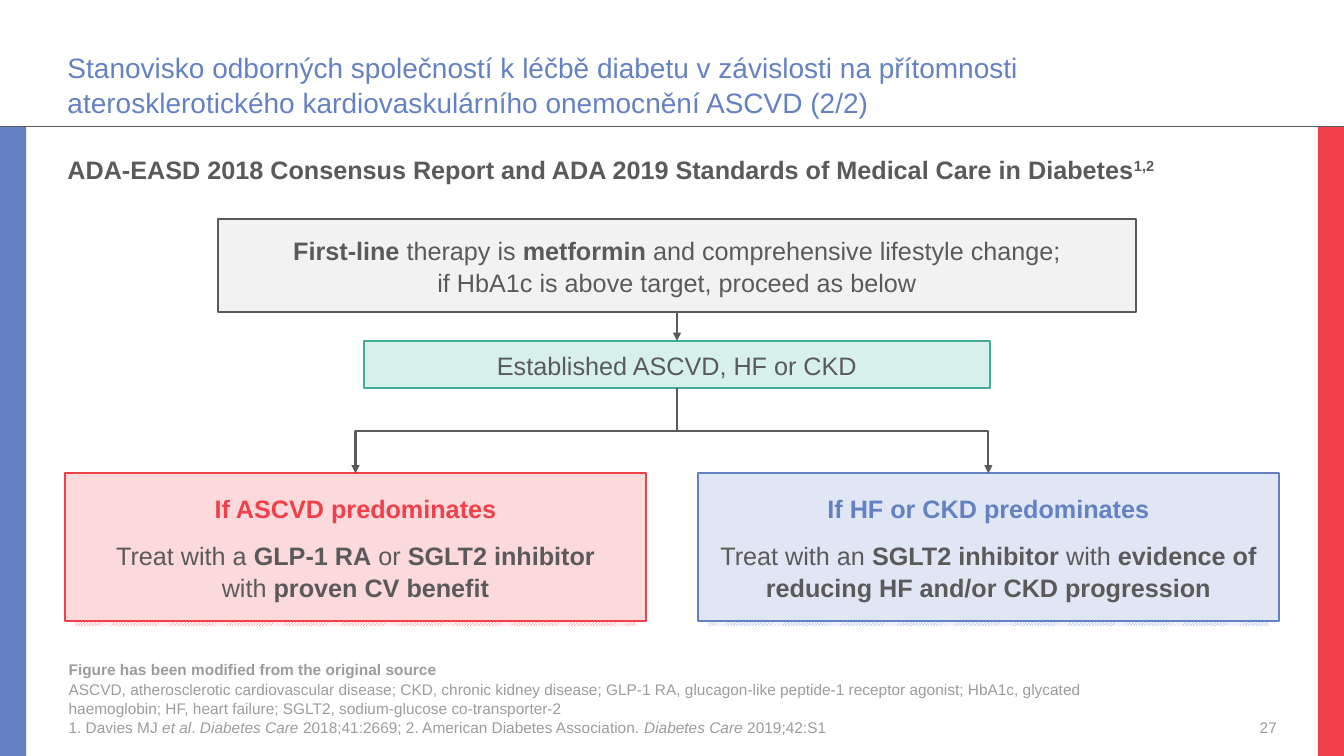
"""Build the slide on consensus treatment of diabetes with ASCVD, HF or CKD."""
from lxml.etree import SubElement
from pptx import Presentation
from pptx.dml.color import RGBColor
from pptx.enum.dml import MSO_PATTERN
from pptx.enum.shapes import MSO_CONNECTOR, MSO_SHAPE
from pptx.enum.text import MSO_ANCHOR, MSO_AUTO_SIZE, PP_ALIGN
from pptx.oxml.ns import qn
from pptx.util import Cm, Pt

BLUE = RGBColor(0x64, 0x82, 0xC3)
RED = RGBColor(0xF0, 0x41, 0x4B)
GREEN = RGBColor(0x43, 0xAC, 0x99)
DARK = RGBColor(0x5A, 0x5A, 0x5A)
GREY = RGBColor(0x9C, 0x9C, 0x9C)
WHITE = RGBColor(0xFF, 0xFF, 0xFF)
PALE_GREY = RGBColor(0xF2, 0xF2, 0xF2)
PALE_GREEN = RGBColor(0xD8, 0xF0, 0xEB)
PALE_RED = RGBColor(0xFC, 0xD9, 0xDB)
PALE_BLUE = RGBColor(0xE0, 0xE6, 0xF3)

TITLE = [[("Stanovisko odborných společností k léčbě diabetu v závislosti na přítomnosti "
           "aterosklerotického kardiovaskulárního onemocnění ASCVD (2/2)", "")]]
HEADING = [[("ADA-EASD 2018 Consensus Report and ADA 2019 Standards of Medical Care in Diabetes", "bold"),
            ("1,2", "bold super")]]
FIRST_LINE = [[("First-line", "bold"), (" therapy is ", ""), ("metformin", "bold"),
               (" and comprehensive lifestyle change;", ""), ("\n", ""),
               ("if HbA1c is above target, proceed as below", "")]]
ESTABLISHED = [[("Established ASCVD, HF or CKD", "")]]
BRANCHES = [
    (1.63, RED, PALE_RED, [
        [("If ASCVD predominates", "bold")],
        [("Treat with a ", ""), ("GLP-1 RA", "bold"), (" or ", ""), ("SGLT2 inhibitor", "bold"),
         ("\n", ""), ("with ", ""), ("proven CV benefit", "bold")]]),
    (17.58, BLUE, PALE_BLUE, [
        [("If HF or CKD predominates", "bold")],
        [("Treat with an ", ""), ("SGLT2 inhibitor ", "bold"), ("with ", ""),
         ("evidence of reducing HF and/or CKD progression", "bold")]]),
]
FOOTNOTES = [
    [("Figure has been modified from the original source", "bold")],
    [("ASCVD, atherosclerotic cardiovascular disease; CKD, chronic kidney disease; GLP-1 RA, "
      "glucagon-like peptide-1 receptor agonist; HbA1c, glycated haemoglobin; HF, heart failure; "
      "SGLT2, sodium-glucose co-transporter-2", "")],
    [("1. Davies MJ ", ""), ("et al", "italic"), (". ", ""), ("Diabetes Care ", "italic"),
     ("2018;41:2669; 2. American Diabetes Association. ", ""), ("Diabetes Care ", "italic"),
     ("2019;42:S1", "")],
]
PAGE = [[("27", "")]]

SLIDE_W, SLIDE_H = 33.87, 19.05
RULE_Y, BAR_W = 3.18, 0.66
CENTRE_X = 17.06
FIRST_Y, FIRST_W, FIRST_H = 5.51, 23.14, 2.36
EST_Y, EST_W, EST_H = 8.59, 15.77, 1.19
BRANCH_Y, BRANCH_W, BRANCH_H = 11.93, 14.66, 3.71
HATCH_INSET, HATCH_DROP = 0.27, 0.13


def write(sp, paragraphs, size, colors, align=PP_ALIGN.LEFT, anchor=MSO_ANCHOR.MIDDLE, inset=True):
    tf = sp.text_frame
    tf.word_wrap = True
    tf.auto_size = MSO_AUTO_SIZE.NONE
    tf.vertical_anchor = anchor
    if not inset:
        tf.margin_left = tf.margin_top = tf.margin_right = tf.margin_bottom = 0
    for i, runs in enumerate(paragraphs):
        p = tf.add_paragraph() if i else tf.paragraphs[0]
        p.alignment = align
        p.line_spacing = 1.05
        p.space_before = Pt(11.5 if i and len(colors) > 1 else 0)
        for text, style in runs:
            if text == "\n":
                p.add_line_break()
                continue
            r = p.add_run()
            r.text = text
            r.font.name = "Arial"
            r.font.size = Pt(size)
            r.font.bold = "bold" in style
            r.font.italic = "italic" in style
            r.font.color.rgb = colors[min(i, len(colors) - 1)]
            if "super" in style:
                r.font._element.set("baseline", "30000")


def place(sp, x, y, w, h):
    sp.left, sp.top, sp.width, sp.height = Cm(x), Cm(y), Cm(w), Cm(h)
    return sp


def add_rect(s, x, y, w, h, fill, line=None):
    sp = s.shapes.add_shape(MSO_SHAPE.RECTANGLE, Cm(x), Cm(y), Cm(w), Cm(h))
    sp.shadow.inherit = False
    sp.fill.solid()
    sp.fill.fore_color.rgb = fill
    if line is None:
        sp.line.fill.background()
    else:
        sp.line.color.rgb = line
        sp.line.width = Pt(1.5)
    return sp


def add_line(s, kind, x1, y1, x2, y2, width=1.5, arrow=True):
    c = s.shapes.add_connector(kind, Cm(x1), Cm(y1), Cm(x2), Cm(y2))
    c.line.color.rgb = DARK
    c.line.width = Pt(width)
    if arrow:
        SubElement(c.line._get_or_add_ln(), qn("a:tailEnd"), type="triangle")
    SubElement(c._element.spPr, qn("a:effectLst"))
    return c


def add_elbow(s, x1, y1, x2, y2):
    side = 1 if x2 > x1 else -1
    mid_x, mid_y = (x1 + x2) / 2, (y1 + y2) / 2
    half_run, half_drop = abs(x2 - x1) / 2, (y2 - y1) / 2
    c = add_line(s, MSO_CONNECTOR.ELBOW, mid_x + side * half_drop, mid_y - half_run,
                 mid_x - side * half_drop, mid_y + half_run)
    degrees = 270 if side > 0 else 90
    c._element.spPr.find(qn("a:xfrm")).set("rot", str(degrees * 60000))


def main():
    prs = Presentation()
    prs.slide_width, prs.slide_height = Cm(SLIDE_W), Cm(SLIDE_H)
    s = prs.slides.add_slide(prs.slide_layouts[1])

    for x, color in ((0, BLUE), (SLIDE_W - BAR_W, RED)):
        add_rect(s, x, RULE_Y, BAR_W, SLIDE_H - RULE_Y, color)
    add_line(s, MSO_CONNECTOR.STRAIGHT, 0, RULE_Y, SLIDE_W, RULE_Y, 0.25, False)

    title = place(s.shapes.title, 1.7, 0.46, 28.45, 2.54)
    write(title, TITLE, 20, [BLUE], anchor=MSO_ANCHOR.BOTTOM, inset=False)
    body = place(s.placeholders[1], 1.7, 3.84, 30.58, 1.5)
    pPr = body.text_frame.paragraphs[0]._p.get_or_add_pPr()
    pPr.set("marL", "0")
    pPr.set("indent", "0")
    SubElement(pPr, qn("a:buNone"))
    write(body, HEADING, 18, [DARK], anchor=MSO_ANCHOR.TOP, inset=False)

    first = add_rect(s, CENTRE_X - FIRST_W / 2, FIRST_Y, FIRST_W, FIRST_H, PALE_GREY, DARK)
    write(first, FIRST_LINE, 18, [DARK], PP_ALIGN.CENTER)
    established = add_rect(s, CENTRE_X - EST_W / 2, EST_Y, EST_W, EST_H, PALE_GREEN, GREEN)
    write(established, ESTABLISHED, 18, [DARK], PP_ALIGN.CENTER)
    add_line(s, MSO_CONNECTOR.STRAIGHT, CENTRE_X, FIRST_Y + FIRST_H, CENTRE_X, EST_Y)

    for x, color, pale, paragraphs in BRANCHES:
        hatch = add_rect(s, x + HATCH_INSET, BRANCH_Y + BRANCH_H / 2, BRANCH_W - 2 * HATCH_INSET,
                         BRANCH_H / 2 + HATCH_DROP, WHITE)
        hatch.fill.patterned()
        hatch.fill.pattern = MSO_PATTERN.DARK_UPWARD_DIAGONAL
        hatch.fill.fore_color.rgb = color
        hatch.fill.back_color.rgb = WHITE
        branch = add_rect(s, x, BRANCH_Y, BRANCH_W, BRANCH_H, pale, color)
        write(branch, paragraphs, 18, [color, DARK], PP_ALIGN.CENTER)
        add_elbow(s, CENTRE_X, EST_Y + EST_H, x + BRANCH_W / 2, BRANCH_Y)

    for box, paragraphs, align in (((1.73, 16.6, 26.26, 1.97), FOOTNOTES, PP_ALIGN.LEFT),
                                   ((30.53, 17.53, 1.65, 1.02), PAGE, PP_ALIGN.RIGHT)):
        sp = s.shapes.add_textbox(*map(Cm, box))
        write(sp, paragraphs, 11, [GREY], align, MSO_ANCHOR.BOTTOM, False)

    prs.save("out.pptx")


if __name__ == "__main__":
    main()
